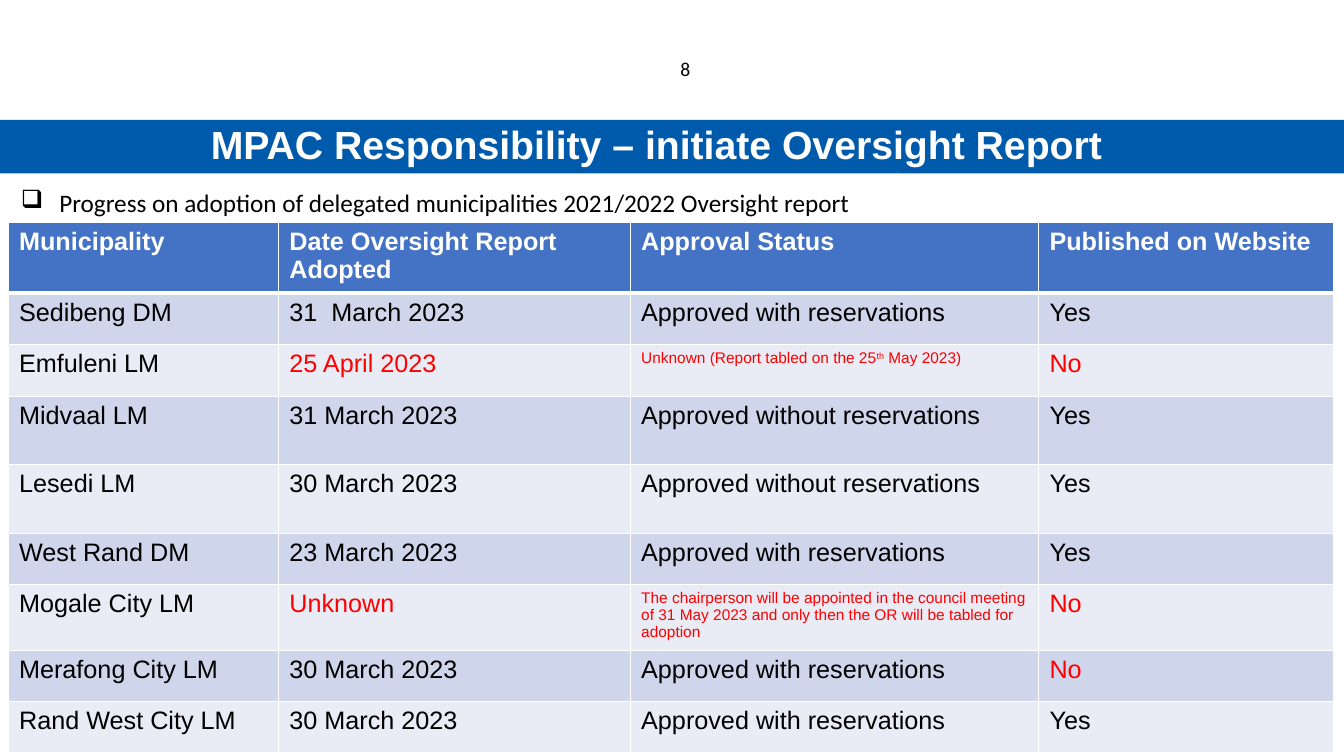
import pptx
import pptx.util
import pptx.dml.color
import pptx.enum.shapes
import pptx.enum.text
import pptx.oxml
import pptx.oxml.ns
from pptx.util import Inches

COLORS = {
    "white": "FFFFFF", "black": "000000", "red": "FF0000", "banner": "005AAB",
    "header": "4472C4", "odd_row": "CFD5EA", "even_row": "E9EBF5",
}


def add_run(paragraph, text, size, color, font="Arial", bold=False):
    run = paragraph.add_run()
    run.text = text
    run.font.size = pptx.util.Pt(size)
    run.font.name = font
    run.font.bold = bold
    run.font.color.rgb = pptx.dml.color.RGBColor.from_string(COLORS[color])
    return run


def add_border(cell, side, width):
    cell._tc.get_or_add_tcPr().append(pptx.oxml.parse_xml(
        f'<a:{side} {pptx.oxml.ns.nsdecls("a")} w="{pptx.util.Pt(width)}">'
        f'<a:solidFill><a:srgbClr val="{COLORS["white"]}"/></a:solidFill></a:{side}>'))


presentation = pptx.Presentation()
presentation.slide_width = Inches(13.33)
presentation.slide_height = Inches(7.5)
slide = presentation.slides.add_slide(presentation.slide_layouts[6])

# Page number
page_number = slide.shapes.add_textbox(Inches(6.65), Inches(0.52), Inches(0.66), Inches(0.4))
page_number.text_frame.word_wrap = True
add_run(page_number.text_frame.paragraphs[0], "8", 14, "black", "Calibri")

# Banner and title
banner = slide.shapes.add_shape(
    pptx.enum.shapes.MSO_SHAPE.RECTANGLE, 0, Inches(1.19), Inches(13.33), Inches(0.53))
banner.shadow.inherit = False
banner.fill.solid()
banner.fill.fore_color.rgb = pptx.dml.color.RGBColor.from_string(COLORS["banner"])
banner.line.fill.background()

title = slide.shapes.add_textbox(0, Inches(1.24), Inches(13.02), Inches(0.44))
title.text_frame.word_wrap = True
title.text_frame.vertical_anchor = pptx.enum.text.MSO_ANCHOR.MIDDLE
paragraph = title.text_frame.paragraphs[0]
paragraph.alignment = pptx.enum.text.PP_ALIGN.CENTER
paragraph.line_spacing = 0.9
add_run(paragraph, "MPAC Responsibility – initiate Oversight Report", 28, "white", bold=True)

# Bulleted introduction
introduction = slide.shapes.add_textbox(Inches(0.11), Inches(1.84), Inches(13.15), Inches(5.46))
introduction.text_frame.word_wrap = True
paragraph = introduction.text_frame.paragraphs[0]
paragraph.line_spacing = 0.9
properties = paragraph._p.get_or_add_pPr()
properties.set("marL", str(Inches(0.38)))
properties.set("indent", str(Inches(-0.38)))
properties.append(pptx.oxml.parse_xml(f'<a:buChar {pptx.oxml.ns.nsdecls("a")} char="❑"/>'))
add_run(paragraph, "Progress on adoption of delegated municipalities 2021/2022 Oversight report",
        18, "black", "Calibri")

# Table content: a note replaces the approval status where adoption is outstanding
WITH = "Approved with reservations"
WITHOUT = "Approved without reservations"
TABLED_NOTE = "Unknown (Report tabled on the 25^th^ May 2023)"  # ^ marks superscript
CHAIR_NOTE = ("The chairperson will be appointed in the council meeting of 31 May 2023 "
              "and only then the OR will be tabled for adoption")
NOTES = (TABLED_NOTE, CHAIR_NOTE)
RED_TEXTS = ("25 April 2023", "Unknown", "No") + NOTES
rows = [
    ("Municipality", "Date Oversight Report Adopted", "Approval Status", "Published on Website"),
    ("Sedibeng DM", "31  March 2023", WITH, "Yes"),
    ("Emfuleni LM", "25 April 2023", TABLED_NOTE, "No"),
    ("Midvaal LM", "31 March 2023", WITHOUT, "Yes"),
    ("Lesedi LM", "30 March 2023", WITHOUT, "Yes"),
    ("West Rand DM", "23 March 2023", WITH, "Yes"),
    ("Mogale City LM", "Unknown", CHAIR_NOTE, "No"),
    ("Merafong City LM", "30 March 2023", WITH, "No"),
    ("Rand West City LM", "30 March 2023", WITH, "Yes"),
]
column_widths = [2.68, 3.49, 4.05, 2.93]
row_heights = [0.7, 0.51, 0.51, 0.68, 0.68, 0.51, 0.65, 0.51, 0.51]

# Table
table = slide.shapes.add_table(
    len(rows), len(column_widths), Inches(0.08), Inches(2.21), Inches(13.15), Inches(5.25)).table
for column, width in zip(table.columns, column_widths):
    column.width = Inches(width)
for row_index, (texts, height) in enumerate(zip(rows, row_heights)):
    table.rows[row_index].height = Inches(height)
    is_header = row_index == 0
    fill = "header" if is_header else "odd_row" if row_index % 2 else "even_row"
    for column_index, text in enumerate(texts):
        cell = table.cell(row_index, column_index)
        cell.margin_left = cell.margin_right = Inches(0.11)
        cell.margin_top = cell.margin_bottom = Inches(0.05)
        add_border(cell, "lnL", 1)
        add_border(cell, "lnR", 1)
        add_border(cell, "lnT", 3 if row_index == 1 else 1)
        add_border(cell, "lnB", 3 if is_header else 1)
        cell.fill.solid()
        cell.fill.fore_color.rgb = pptx.dml.color.RGBColor.from_string(COLORS[fill])
        color = "white" if is_header else "red" if text in RED_TEXTS else "black"
        size = 11 if text in NOTES else 18
        for part_index, part in enumerate(text.split("^")):
            run = add_run(cell.text_frame.paragraphs[0], part, size, color, bold=is_header)
            if part_index % 2:
                run.font._element.set("baseline", "30000")

presentation.save("out.pptx")
